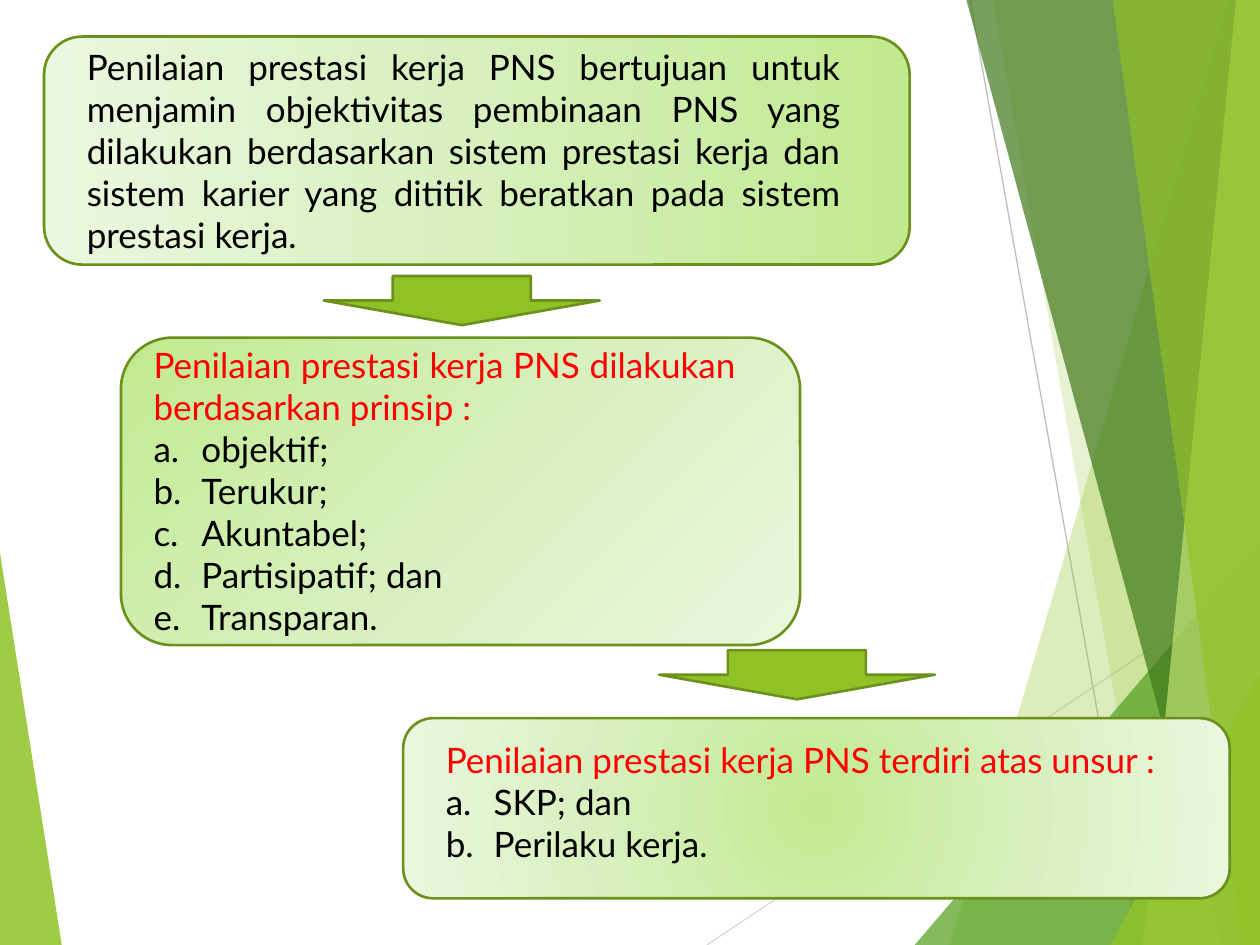
from lxml import etree
from pptx import Presentation
from pptx.dml.color import RGBColor
from pptx.enum.shapes import MSO_CONNECTOR, MSO_SHAPE
from pptx.enum.text import MSO_AUTO_SIZE, PP_ALIGN
from pptx.oxml import parse_xml
from pptx.oxml.ns import nsdecls, qn
from pptx.util import Inches, Pt

ROUNDED = MSO_SHAPE.ROUNDED_RECTANGLE
DOWN_ARROW = MSO_SHAPE.DOWN_ARROW
STRAIGHT = MSO_CONNECTOR.STRAIGHT
FIT_SHAPE = MSO_AUTO_SIZE.SHAPE_TO_FIT_TEXT
JUSTIFY = PP_ALIGN.JUSTIFY

BLACK = RGBColor(0x00, 0x00, 0x00)
RED = RGBColor(0xFF, 0x00, 0x00)
GREEN = RGBColor(0x90, 0xC2, 0x26)
MID_GREEN = RGBColor(0x54, 0xA0, 0x21)
DARK_GREEN = RGBColor(0x3F, 0x78, 0x19)
LIGHT_GREEN = RGBColor(0xC0, 0xE4, 0x74)
OUTLINE = RGBColor(0x6B, 0x90, 0x1C)
LIGHT_GRAY = RGBColor(0xD9, 0xD9, 0xD9)
GRAY = RGBColor(0xBF, 0xBF, 0xBF)
GRADIENT = (
    (0, RGBColor(0xC1, 0xEA, 0x90)),
    (50, RGBColor(0xD7, 0xF0, 0xBD)),
    (100, RGBColor(0xEB, 0xF7, 0xDF)),
)
FROM_RIGHT = '<a:lin ang="10800000" scaled="1"/>'
FROM_CORNER = '<a:path path="circle"><a:fillToRect r="100000" b="100000"/></a:path>'
FROM_CENTER = (
    '<a:path path="circle">'
    '<a:fillToRect l="50000" t="50000" r="50000" b="50000"/></a:path>'
)

LEFT_WEDGE = ([(0, 4.39), (0.49, 7.5), (0, 7.5)], GREEN, 85)
RIGHT_BANDS = [
    ([(9.75, 0), (7.54, 7.5), (10, 7.5), (10, 0)], GREEN, 30),
    ([(7.88, 0), (9.19, 7.5), (10, 7.5), (10, 0)], GREEN, 20),
    ([(7.26, 7.5), (10, 4.29), (10, 7.5)], MID_GREEN, 72),
    ([(7.67, 0), (9.7, 7.5), (10, 7.5), (10, 0)], DARK_GREEN, 70),
    ([(9.81, 0), (9.07, 7.5), (10, 7.5), (10, 0)], LIGHT_GREEN, 70),
    ([(8.83, 0), (9.86, 7.5), (10, 7.5), (10, 0)], GREEN, 65),
    ([(8.81, 7.5), (10, 5.35), (10, 7.5)], GREEN, 80),
]


def add_band(slide, points, color, opacity):
    """Draw a translucent background polygon."""
    corners = [(Inches(x), Inches(y)) for x, y in points]
    builder = slide.shapes.build_freeform(*corners[0])
    builder.add_line_segments(corners[1:])
    s = builder.convert_to_shape()
    s.shadow.inherit = False
    s.fill.solid()
    s.fill.fore_color.rgb = color
    s.line.fill.background()
    clr = s.element.spPr.find(qn("a:solidFill")).find(qn("a:srgbClr"))
    etree.SubElement(clr, qn("a:alpha"), val=str(opacity * 1000))


def add_thin_line(slide, x1, y1, x2, y2, color):
    """Draw a thin background line."""
    c = slide.shapes.add_connector(
        STRAIGHT, Inches(x1), Inches(y1), Inches(x2), Inches(y2)
    )
    c.line.color.rgb = color
    c.line.width = Pt(0.75)
    etree.SubElement(c.element.spPr, qn("a:effectLst"))


def add_outlined(slide, kind, x, y, w, h):
    """Add a green preset shape with a dark green outline."""
    s = slide.shapes.add_shape(kind, Inches(x), Inches(y), Inches(w), Inches(h))
    s.shadow.inherit = False
    s.fill.solid()
    s.fill.fore_color.rgb = GREEN
    s.line.color.rgb = OUTLINE
    s.line.width = Pt(1.5)
    return s


def add_panel(slide, x, y, w, h, direction):
    """Add a rounded panel with a gradient fill."""
    s = add_outlined(slide, ROUNDED, x, y, w, h)
    stops = "".join(
        f'<a:gs pos="{pos * 1000}"><a:srgbClr val="{color}"/></a:gs>'
        for pos, color in GRADIENT
    )
    gradient = parse_xml(
        f'<a:gradFill {nsdecls("a")} rotWithShape="1">'
        f"<a:gsLst>{stops}</a:gsLst>{direction}</a:gradFill>"
    )
    sp_pr = s.element.spPr
    sp_pr.replace(sp_pr.find(qn("a:solidFill")), gradient)


def add_text(slide, x, y, w, h, lead, color, items=()):
    """Add a lead paragraph followed by a lettered list."""
    box = slide.shapes.add_textbox(Inches(x), Inches(y), Inches(w), Inches(h))
    tf = box.text_frame
    tf.word_wrap = True
    tf.auto_size = FIT_SHAPE
    add_paragraph(tf.paragraphs[0], lead, color)
    for item in items:
        p = tf.add_paragraph()
        p_pr = p._p.get_or_add_pPr()
        p_pr.set("marL", str(Inches(0.38)))
        p_pr.set("indent", str(-Inches(0.38)))
        etree.SubElement(p_pr, qn("a:buAutoNum"), type="alphaLcPeriod")
        add_paragraph(p, item, BLACK)


def add_paragraph(p, text, color):
    """Fill a paragraph with justified text."""
    p.text = text
    p.alignment = JUSTIFY
    p.font.name = "Lato"
    p.font.size = Pt(20)
    p.font.color.rgb = color


def main():
    """Build and save the slide."""
    prs = Presentation()
    prs.slide_width = Inches(10)
    prs.slide_height = Inches(7.5)
    slide = prs.slides.add_slide(prs.slide_layouts[6])

    add_band(slide, *LEFT_WEDGE)
    add_thin_line(slide, 5.61, 7.5, 10, 4.57, LIGHT_GRAY)
    add_thin_line(slide, 7.7, 0, 9.04, 7.5, GRAY)
    for band in RIGHT_BANDS:
        add_band(slide, *band)

    add_panel(slide, 0.35, 0.29, 6.87, 1.81, FROM_RIGHT)
    add_text(
        slide, 0.59, 0.31, 6.18, 1.78,
        "Penilaian prestasi kerja PNS bertujuan untuk menjamin objektivitas "
        "pembinaan PNS yang dilakukan berdasarkan sistem prestasi kerja dan "
        "sistem karier yang dititik beratkan pada sistem prestasi kerja.",
        BLACK,
    )
    add_panel(slide, 0.96, 2.68, 5.39, 2.44, FROM_CORNER)
    add_text(
        slide, 1.12, 2.68, 4.82, 2.46,
        "Penilaian prestasi kerja PNS dilakukan berdasarkan prinsip :",
        RED,
        ["objektif;", "Terukur;", "Akuntabel;", "Partisipatif; dan", "Transparan."],
    )
    add_panel(slide, 3.2, 5.7, 6.56, 1.43, FROM_CENTER)
    add_text(
        slide, 3.44, 5.81, 6.04, 1.41,
        "Penilaian prestasi kerja PNS terdiri atas unsur :",
        RED,
        ["SKP; dan", "Perilaku kerja."],
    )
    for x, y in ((2.57, 2.19), (5.23, 5.16)):
        add_outlined(slide, DOWN_ARROW, x, y, 2.19, 0.39)

    prs.save("out.pptx")


if __name__ == "__main__":
    main()
